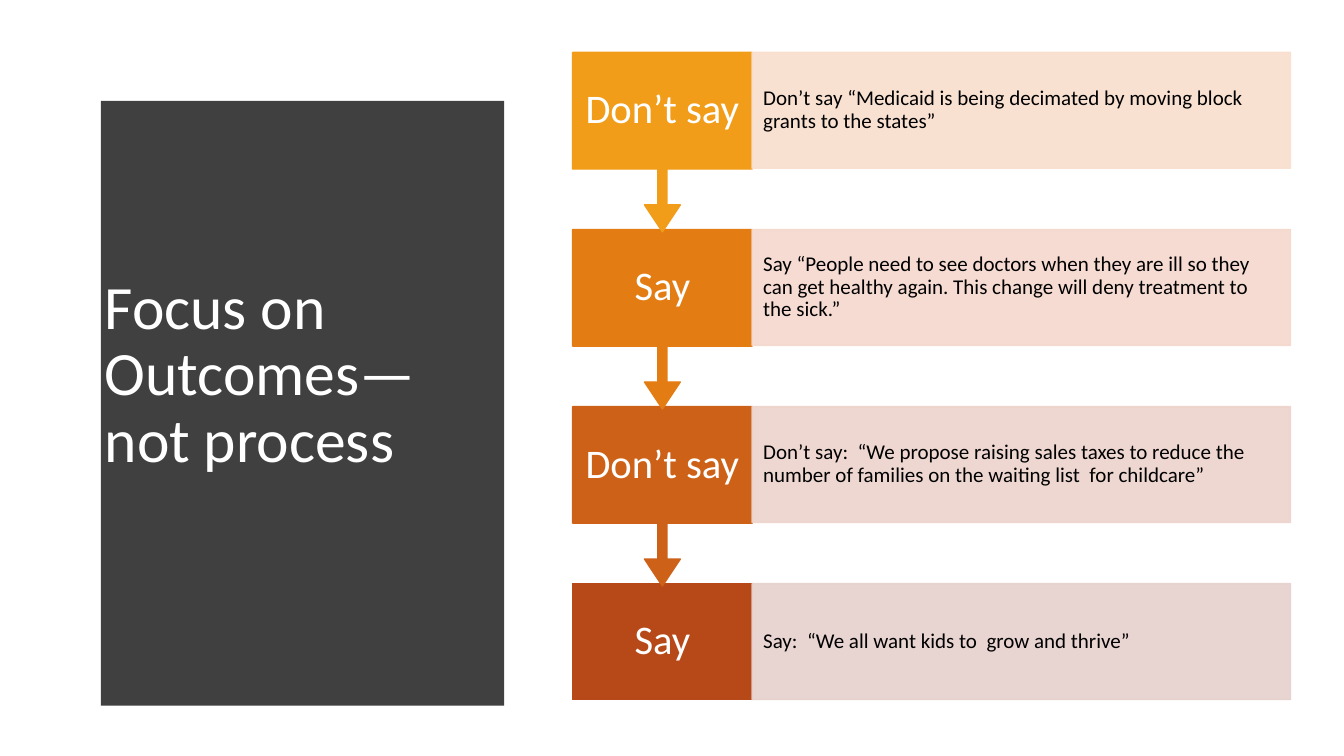
from lxml import etree
from pptx import Presentation
from pptx import util as u
from pptx.dml.color import RGBColor
from pptx.enum import shapes, text
from pptx.oxml.ns import qn

COLORS = {
    "panel": "404040", "white": "FFFFFF", "black": "000000",
    "label1": "F19D19", "label2": "E37D13", "label3": "CD6117", "label4": "B74919",
    "quote1": "F9DECD", "quote2": "F4D8CC", "quote3": "EDD3CB", "quote4": "E6D0CC",
}
STEPS = [
    ("Don’t say", "Don’t say “Medicaid is being decimated by moving block grants to the states”"),
    ("Say", "Say “People need to see doctors when they are ill so they can get healthy again. "
            "This change will deny treatment to the sick.”"),
    ("Don’t say", "Don’t say:  “We propose raising sales taxes to reduce the number of families "
                  "on the waiting list  for childcare”"),
    ("Say", "Say:  “We all want kids to  grow and thrive”"),
]
TOP, BOTTOM = 0.52, 6.96
LABEL_LEFT, LABEL_WIDTH, QUOTE_WIDTH = 5.68, 1.78, 5.34
BOX_HEIGHT, CALLOUT_HEIGHT = 1.15, 1.78
PITCH = (5.79 - TOP) / (len(STEPS) - 1)


class SlideBuilder:
    font = "Calibri"
    line_spacing = 0.9

    def __init__(self, slide):
        self.slide = slide

    def paint(self, shape, color, alpha=None, outline=True):
        """Give a shape one colour for fill and outline."""
        rgb = RGBColor.from_string(COLORS[color])
        shape.shadow.inherit = False
        shape.fill.solid()
        shape.fill.fore_color.rgb = rgb
        if outline:
            shape.line.color.rgb = rgb
            shape.line.width = u.Pt(1)
        else:
            shape.line.fill.background()
        if alpha is not None:
            for element in shape._element.spPr.iter(qn("a:srgbClr")):
                etree.SubElement(element, qn("a:alpha")).set("val", str(alpha * 1000))

    def set_words(self, shape, words, size, color, align=text.PP_ALIGN.LEFT, inset=(0.1, 0.05)):
        frame = shape.text_frame
        frame.word_wrap = True
        frame.vertical_anchor = text.MSO_ANCHOR.MIDDLE
        frame.margin_left = frame.margin_right = u.Inches(inset[0])
        frame.margin_top = frame.margin_bottom = u.Inches(inset[1])
        frame.text = words
        paragraph = frame.paragraphs[0]
        paragraph.alignment = align
        paragraph.line_spacing = self.line_spacing
        font = paragraph.runs[0].font
        font.name, font.size = self.font, u.Pt(size)
        font.color.rgb = RGBColor.from_string(COLORS[color])

    def curved_panel(self, left, top, bottom, corner, bulge, pieces=40):
        """Draw a panel whose right edge is a shallow parabola."""
        middle, half = (top + bottom) / 2, (bottom - top) / 2
        edge = []
        for piece in range(pieces + 1):
            t = 2 * piece / pieces - 1
            edge.append((corner + bulge * (1 - t * t), middle + half * t))
        builder = self.slide.shapes.build_freeform(left, top, scale=u.Inches(1))
        builder.add_line_segments(edge + [(left, bottom)], close=True)
        self.paint(builder.convert_to_shape(), "panel", outline=False)

    def title(self, words, left, top, width, height):
        box = self.slide.shapes.add_textbox(*map(u.Inches, (left, top, width, height)))
        self.set_words(box, words, 44, "white")

    def box(self, kind, left, top, width, height, color, alpha=None):
        shape = self.slide.shapes.add_shape(kind, *map(u.Inches, (left, top, width, height)))
        self.paint(shape, color, alpha)
        return shape

    def label(self, words, top, color, has_arrow):
        kind, height = shapes.MSO_SHAPE.RECTANGLE, BOX_HEIGHT
        if has_arrow:
            kind, height = shapes.MSO_SHAPE.DOWN_ARROW_CALLOUT, CALLOUT_HEIGHT
        shape = self.box(kind, LABEL_LEFT, top, LABEL_WIDTH, height, color)
        if has_arrow:
            for index, value in enumerate((0.05, 0.1, 0.15, 0.65)):
                shape.adjustments[index] = value
        self.set_words(shape, words, 29, "white", text.PP_ALIGN.CENTER, (0.05, 0.23))

    def quote(self, words, top, color):
        shape = self.box(shapes.MSO_SHAPE.RECTANGLE, LABEL_LEFT + LABEL_WIDTH, top,
                         QUOTE_WIDTH, BOX_HEIGHT, color, alpha=90)
        self.set_words(shape, words, 15, "black", inset=(0.11, 0.21))


def main():
    presentation = Presentation()
    presentation.slide_width, presentation.slide_height = u.Inches(13.33), u.Inches(7.5)
    builder = SlideBuilder(presentation.slides.add_slide(presentation.slide_layouts[6]))

    # Title panel
    builder.curved_panel(0.53, TOP, BOTTOM, corner=5.08, bulge=0.24)
    builder.title("Focus on Outcomes—not process", 0.94, 1.11, 3.74, 5.24)

    # Steps, from the bottom up so that each arrow tip overlaps the next box
    for index in reversed(range(len(STEPS))):
        label, quote = STEPS[index]
        top = TOP + index * PITCH
        builder.label(label, top, f"label{index + 1}", has_arrow=index < len(STEPS) - 1)
        builder.quote(quote, top, f"quote{index + 1}")

    presentation.save("out.pptx")


if __name__ == "__main__":
    main()
